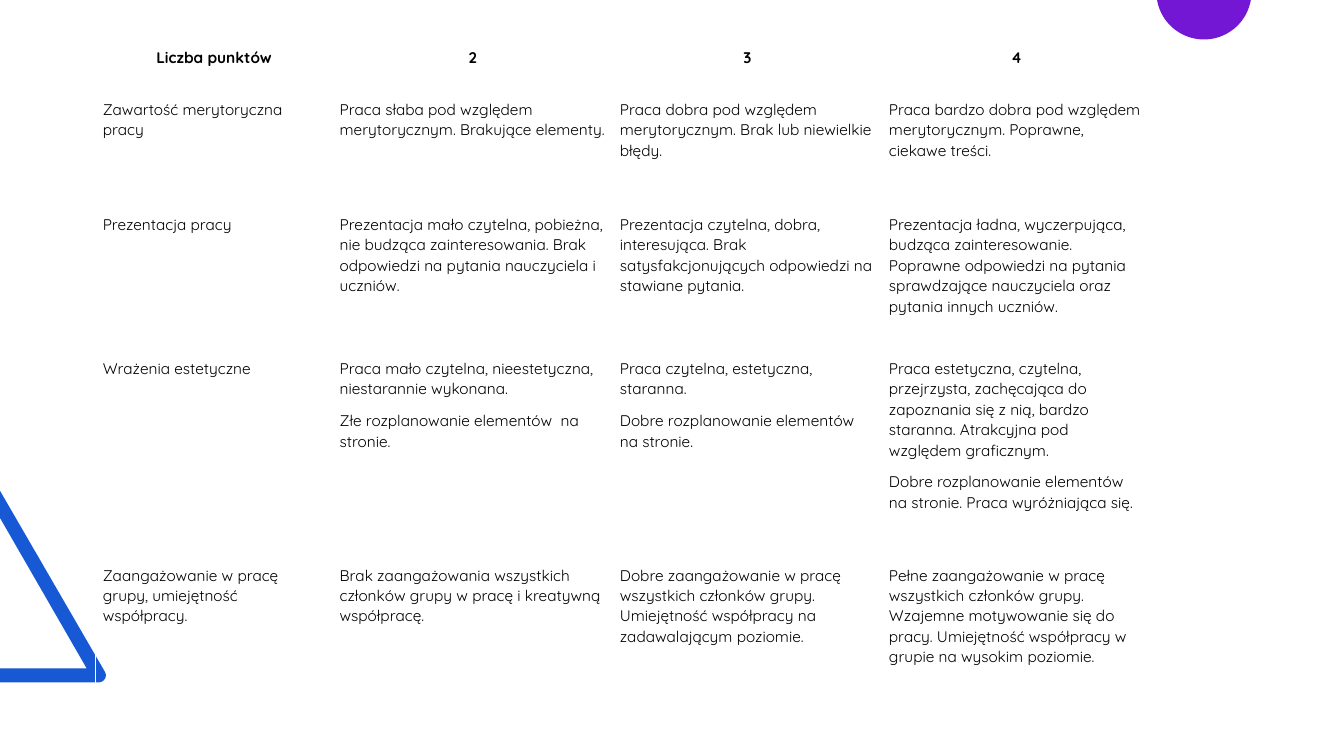
import math
from dataclasses import dataclass

import pptx
import pptx.dml.color
import pptx.enum.text
import pptx.util


@dataclass(frozen=True)
class Theme:
    font: str = "Quicksand"
    size: float = 11
    text: str = "000000"
    background: str = "FFFFFF"
    blue: str = "1759D5"
    violet: str = "7417D5"


THEME = Theme()
BLANK_LAYOUT = 6
TABLE_LEFT, TABLE_TOP = 68.4, 33.84
COLUMN_WIDTHS = [169.2, 200.16, 192.24, 192.24]
ROW_HEIGHTS = [36.72, 82.08, 102.96, 147.6, 102.96]
CELL_INSET = 5.04

RUBRIC = [
    ["Liczba punktów", "2", "3", "4"],
    [
        "Zawartość merytoryczna pracy",
        "Praca słaba pod względem merytorycznym. Brakujące elementy.",
        "Praca dobra pod względem merytorycznym. Brak lub niewielkie błędy.",
        "Praca bardzo dobra pod względem merytorycznym. Poprawne, ciekawe treści.",
    ],
    [
        "Prezentacja pracy",
        "Prezentacja mało czytelna, pobieżna, nie budząca zainteresowania. "
        "Brak odpowiedzi na pytania nauczyciela i uczniów.",
        "Prezentacja czytelna, dobra, interesująca. "
        "Brak satysfakcjonujących odpowiedzi na stawiane pytania.",
        "Prezentacja ładna, wyczerpująca, budząca zainteresowanie. Poprawne odpowiedzi "
        "na pytania sprawdzające nauczyciela oraz pytania innych uczniów.",
    ],
    [
        "Wrażenia estetyczne",
        "Praca mało czytelna, nieestetyczna, niestarannie wykonana.\n"
        "Złe rozplanowanie elementów  na stronie.",
        "Praca czytelna, estetyczna, staranna.\n"
        "Dobre rozplanowanie elementów na stronie.",
        "Praca estetyczna, czytelna, przejrzysta, zachęcająca do zapoznania się z nią, "
        "bardzo staranna. Atrakcyjna pod względem graficznym.\n"
        "Dobre rozplanowanie elementów na stronie. Praca wyróżniająca się.",
    ],
    [
        "Zaangażowanie w pracę grupy, umiejętność współpracy.",
        "Brak zaangażowania wszystkich członków grupy w pracę i kreatywną współpracę.",
        "Dobre zaangażowanie w pracę wszystkich członków grupy. "
        "Umiejętność współpracy na zadawalającym poziomie.",
        "Pełne zaangażowanie w pracę wszystkich członków grupy. Wzajemne motywowanie "
        "się do pracy. Umiejętność współpracy w grupie na wysokim poziomie.",
    ],
]


def color(value):
    return pptx.dml.color.RGBColor.from_string(value)


def arc_points(center_x, center_y, radius, start, end, steps=40):
    angles = [math.radians(start + (end - start) * step / steps) for step in range(steps + 1)]
    return [
        (center_x + radius * math.cos(angle), center_y + radius * math.sin(angle))
        for angle in angles
    ]


def add_outline(slide, points, fill):
    vertices = [(pptx.util.Pt(x), pptx.util.Pt(y)) for x, y in points]
    builder = slide.shapes.build_freeform(*vertices[0])
    builder.add_line_segments(vertices[1:], close=True)
    shape = builder.convert_to_shape()
    shape.shadow.inherit = False
    shape.fill.solid()
    shape.fill.fore_color.rgb = color(fill)
    shape.line.fill.background()
    return shape


def add_triangle_corner(slide):
    band = [(0, 487.4), (0, 477.4), (61.9, 477.4), (0, 370), (0, 350.6)]
    return add_outline(slide, band + arc_points(70.6, 482.4, 5, -30, 90), THEME.blue)


def add_cut_circle(slide):
    center_y, radius = -5.8, 34
    start = math.degrees(math.asin(-center_y / radius))
    return add_outline(
        slide, arc_points(860, center_y, radius, start, 180 - start), THEME.violet
    )


def write_cell(cell, text, header):
    cell.fill.background()
    cell.margin_left = cell.margin_right = pptx.util.Pt(CELL_INSET)
    cell.margin_top = cell.margin_bottom = 0
    frame = cell.text_frame
    alignment = pptx.enum.text.PP_ALIGN
    for index, line in enumerate(text.split("\n")):
        paragraph = frame.add_paragraph() if index else frame.paragraphs[0]
        paragraph.alignment = alignment.CENTER if header else alignment.LEFT
        paragraph.line_spacing = 1.06
        paragraph.space_after = pptx.util.Pt(8)
        run = paragraph.add_run()
        run.text = line
        run.font.name = THEME.font
        run.font.size = pptx.util.Pt(THEME.size)
        run.font.bold = header
        run.font.color.rgb = color(THEME.text)


def add_rubric(slide):
    frame = slide.shapes.add_table(
        len(ROW_HEIGHTS),
        len(COLUMN_WIDTHS),
        pptx.util.Pt(TABLE_LEFT),
        pptx.util.Pt(TABLE_TOP),
        pptx.util.Pt(sum(COLUMN_WIDTHS)),
        pptx.util.Pt(sum(ROW_HEIGHTS)),
    )
    table = frame.table
    table.first_row = table.horz_banding = False
    for column, width in zip(table.columns, COLUMN_WIDTHS):
        column.width = pptx.util.Pt(width)
    for row_index, (row, height) in enumerate(zip(table.rows, ROW_HEIGHTS)):
        row.height = pptx.util.Pt(height)
        for cell, text in zip(row.cells, RUBRIC[row_index]):
            write_cell(cell, text, header=row_index == 0)


def main():
    presentation = pptx.Presentation()
    presentation.slide_width = pptx.util.Pt(960)
    presentation.slide_height = pptx.util.Pt(540)
    slide = presentation.slides.add_slide(presentation.slide_layouts[BLANK_LAYOUT])
    slide.background.fill.solid()
    slide.background.fill.fore_color.rgb = color(THEME.background)
    add_triangle_corner(slide)
    add_cut_circle(slide)
    add_rubric(slide)
    presentation.save("out.pptx")


if __name__ == "__main__":
    main()
